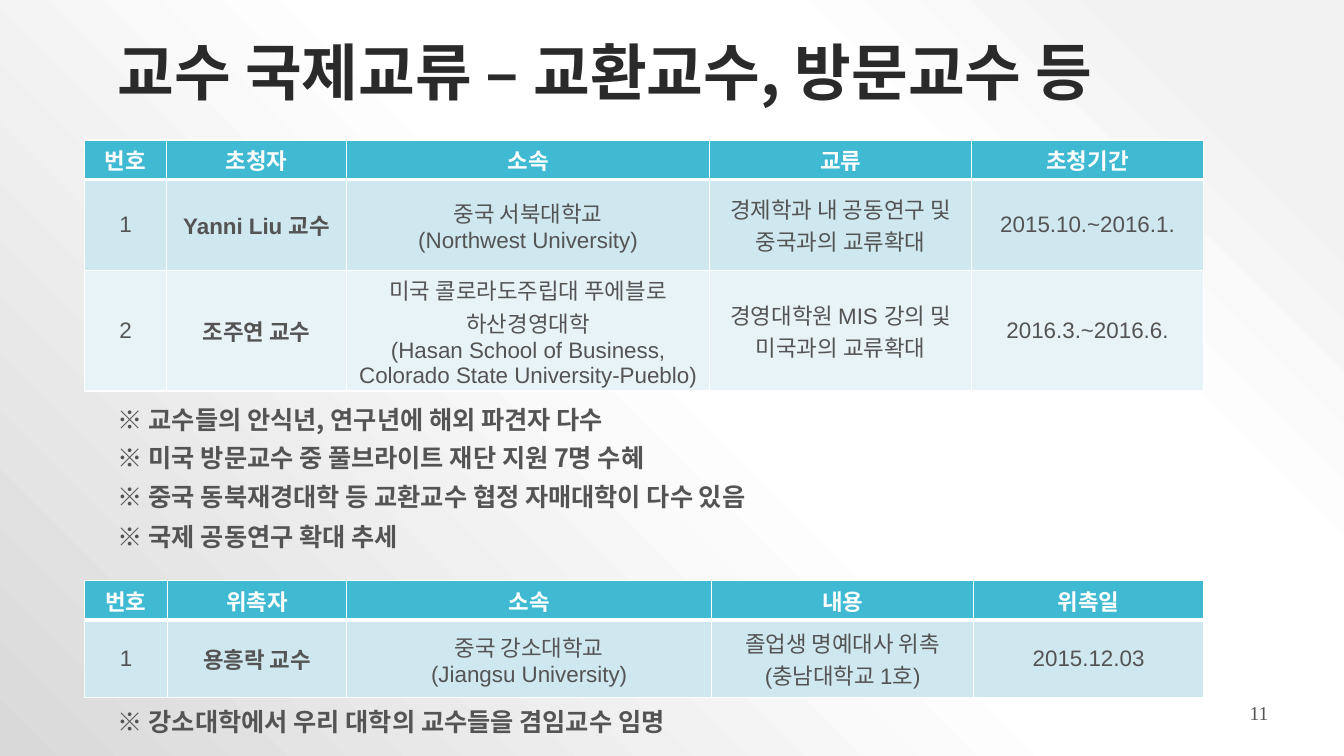
from dataclasses import dataclass

from lxml import etree
from pptx import Presentation
from pptx.dml.color import RGBColor
from pptx.enum.text import MSO_ANCHOR, MSO_AUTO_SIZE, PP_ALIGN
from pptx.oxml import parse_xml
from pptx.oxml.ns import qn
from pptx.util import Inches, Pt

LEFT, CENTER, RIGHT = PP_ALIGN.LEFT, PP_ALIGN.CENTER, PP_ALIGN.RIGHT
TOP, MIDDLE = MSO_ANCHOR.TOP, MSO_ANCHOR.MIDDLE
FIT_TEXT = MSO_AUTO_SIZE.SHAPE_TO_FIT_TEXT
DRAWING_NS = "http://schemas.openxmlformats.org/drawingml/2006/main"

# The page is a grid of 100 columns by 100 rows
PAGE_WIDTH, PAGE_HEIGHT = 13.33, 7.5
TEXT_LEFT, TABLE_LEFT = 8.03, 6.3
NOTE_HEIGHT = 4.93


@dataclass(frozen=True)
class Theme:
    korean: str = "Noto Sans CJK KR"
    latin: str = "Arial"
    serif: str = "Times New Roman"
    title_size: int = 44
    note_size: int = 18
    table_size: int = 16
    number_size: int = 14
    title: str = "2A2A2A"
    body: str = "545454"
    white: str = "FFFFFF"
    header: str = "40BAD2"
    bands: tuple = ("CFE7EE", "E8F3F7")
    backdrop: tuple = ((10, "F2F2F2"), (28, "FFFFFF"), (48, "FFFFFF"), (100, "D9D9D9"))


THEME = Theme()

INVITED = [
    ["번호", "초청자", "소속", "교류", "초청기간"],
    ["1", "Yanni Liu 교수", "중국 서북대학교\n(Northwest University)",
     "경제학과 내 공동연구 및\n중국과의 교류확대", "2015.10.~2016.1."],
    ["2", "조주연 교수",
     "미국 콜로라도주립대 푸에블로\n하산경영대학\n"
     "(Hasan School of Business,\nColorado State University-Pueblo)",
     "경영대학원 MIS 강의 및\n미국과의 교류확대", "2016.3.~2016.6."],
]
APPOINTED = [
    ["번호", "위촉자", "소속", "내용", "위촉일"],
    ["1", "용흥락 교수", "중국 강소대학교\n(Jiangsu University)",
     "졸업생 명예대사 위촉\n(충남대학교 1호)", "2015.12.03"],
]
# Top row, width in columns, wording
NOTES = [
    (53.33, 44.1, "※ 교수들의 안식년, 연구년에 해외 파견자 다수"),
    (58.27, 47.9, "※ 미국 방문교수 중 풀브라이트 재단 지원 7명 수혜"),
    (63.47, 56.4, "※ 중국 동북재경대학 등 교환교수 협정 자매대학이 다수 있음"),
    (68.8, 26.1, "※ 국제 공동연구 확대 추세"),
    (93.2, 48.8, "※ 강소대학에서 우리 대학의 교수들을 겸임교수 임명"),
]


def columns(count):
    return Inches(PAGE_WIDTH * count / 100)


def rows(count):
    return Inches(PAGE_HEIGHT * count / 100)


def style_para(para, font_name, size, color, bold=False, align=LEFT):
    para.alignment = align
    font = para.font
    font.name, font.size, font.bold = font_name, Pt(size), bold
    font.color.rgb = RGBColor.from_string(color)
    east_asian = etree.SubElement(font._element, qn("a:ea"))
    east_asian.set("typeface", THEME.korean)


def paint_background(page):
    stops = "".join(
        f'<a:gs pos="{share * 1000}"><a:srgbClr val="{color}"/></a:gs>'
        for share, color in THEME.backdrop)
    gradient = parse_xml(
        f'<a:gradFill xmlns:a="{DRAWING_NS}" rotWithShape="1"><a:gsLst>{stops}</a:gsLst>'
        '<a:path path="circle"><a:fillToRect l="100000" b="100000"/></a:path></a:gradFill>')
    fill = page.background.fill
    fill.solid()
    solid = page._element.find(".//" + qn("p:bgPr")).find(qn("a:solidFill"))
    solid.getparent().replace(solid, gradient)


def add_text(page, text, place, font_name, size, color, bold=False,
             align=LEFT, anchor=TOP, spacing=1.0, wrap=True):
    left, top, width, height = place
    box = page.shapes.add_textbox(columns(left), rows(top), columns(width), rows(height))
    frame = box.text_frame
    frame.word_wrap, frame.vertical_anchor = wrap, anchor
    if not wrap:
        frame.auto_size = FIT_TEXT
    frame.text = text
    para = frame.paragraphs[0]
    para.line_spacing = spacing
    style_para(para, font_name, size, color, bold, align)


def set_borders(cell, bottom_width, top_width):
    widths = {"lnL": 1, "lnR": 1, "lnT": top_width, "lnB": bottom_width}
    properties = cell._tc.get_or_add_tcPr()
    for position, (side, width) in enumerate(widths.items()):
        properties.insert(position, parse_xml(
            f'<a:{side} xmlns:a="{DRAWING_NS}" w="{Pt(width)}"><a:solidFill>'
            f'<a:srgbClr val="{THEME.white}"/></a:solidFill></a:{side}>'))


def fill_cell(cell, text, row, column):
    is_header = row == 0
    cell.margin_left = cell.margin_right = Inches(0.07)
    cell.margin_top = cell.margin_bottom = Inches(0.04)
    cell.vertical_anchor = MIDDLE
    cell.text = text
    for para in cell.text_frame.paragraphs:
        style_para(para, THEME.latin, THEME.table_size,
                   THEME.white if is_header else THEME.body,
                   bold=is_header or column == 1, align=CENTER)
    color = THEME.header if is_header else THEME.bands[(row - 1) % 2]
    cell.fill.solid()
    cell.fill.fore_color.rgb = RGBColor.from_string(color)
    set_borders(cell, bottom_width=3 if is_header else 1, top_width=3 if row == 1 else 1)


def add_grid(page, content, top, widths, heights):
    table = page.shapes.add_table(
        len(heights), len(widths), columns(TABLE_LEFT), rows(top),
        columns(sum(widths)), rows(sum(heights))).table
    for column, width in zip(table.columns, widths):
        column.width = columns(width)
    for row, height in zip(table.rows, heights):
        row.height = rows(height)
    for row, line in enumerate(content):
        for column, text in enumerate(line):
            fill_cell(table.cell(row, column), text, row, column)


def main():
    deck = Presentation()
    deck.slide_width, deck.slide_height = Inches(PAGE_WIDTH), Inches(PAGE_HEIGHT)
    page = deck.slides.add_slide(deck.slide_layouts[6])
    paint_background(page)

    # Title and page number
    add_text(page, "교수 국제교류 – 교환교수, 방문교수 등", (TEXT_LEFT, 0.27, 90.4, 19.33),
             THEME.korean, THEME.title_size, THEME.title, bold=True,
             anchor=MIDDLE, spacing=0.9)
    add_text(page, "11", (79.52, 92, 15.6, 6.67),
             THEME.serif, THEME.number_size, THEME.body, align=RIGHT)

    # Invited and appointed professors
    add_grid(page, INVITED, 18.53, [6.08, 13.42, 27, 19.5, 17.25], [5.2, 12, 16])
    add_grid(page, APPOINTED, 76.8, [6.15, 13.35, 27.15, 19.5, 17.1], [5.2, 10.3])

    # Remarks below each table
    for top, width, text in NOTES:
        add_text(page, text, (TEXT_LEFT, top, width, NOTE_HEIGHT),
                 THEME.korean, THEME.note_size, THEME.body, bold=True,
                 spacing=0.9, wrap=False)

    deck.save("out.pptx")


if __name__ == "__main__":
    main()
